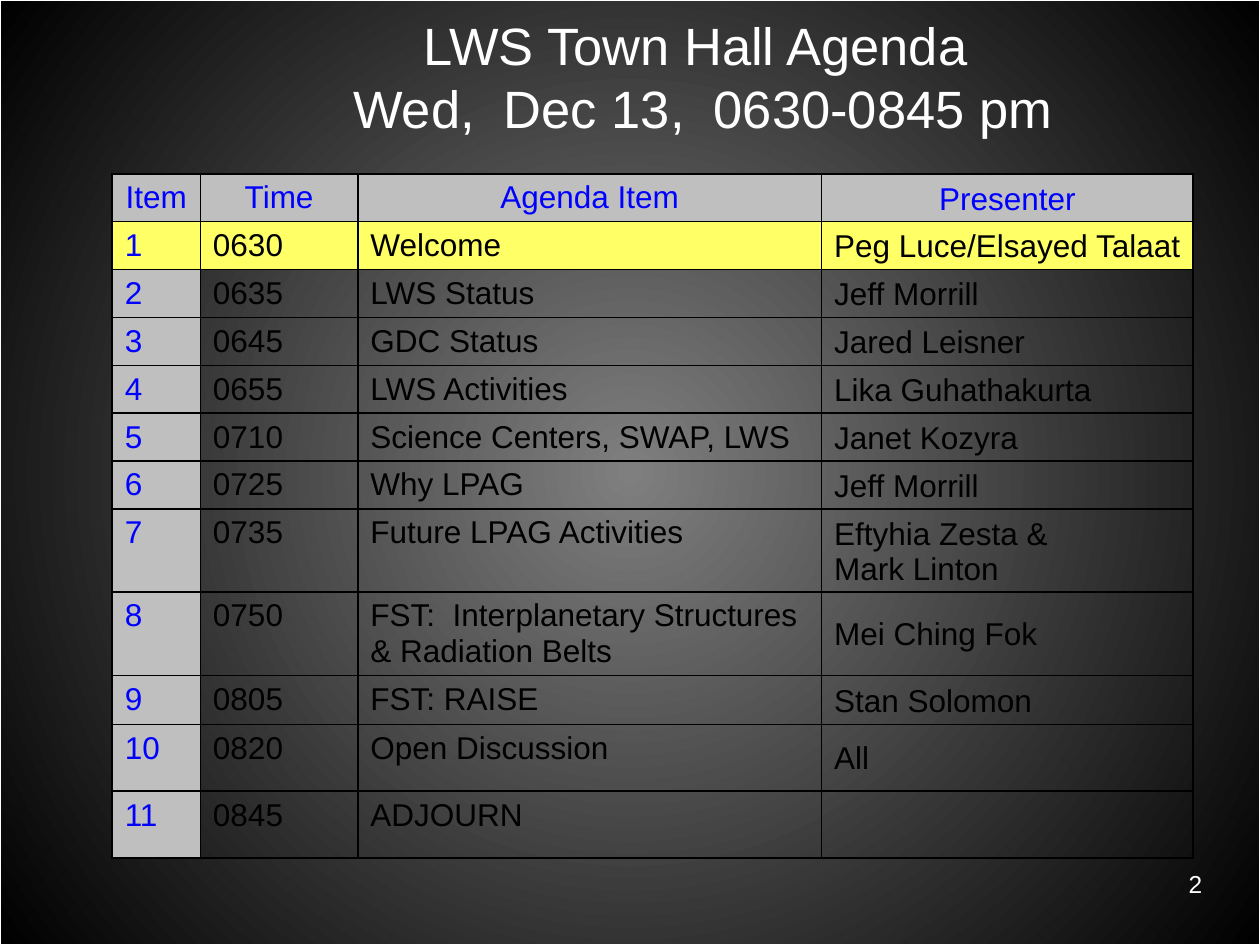
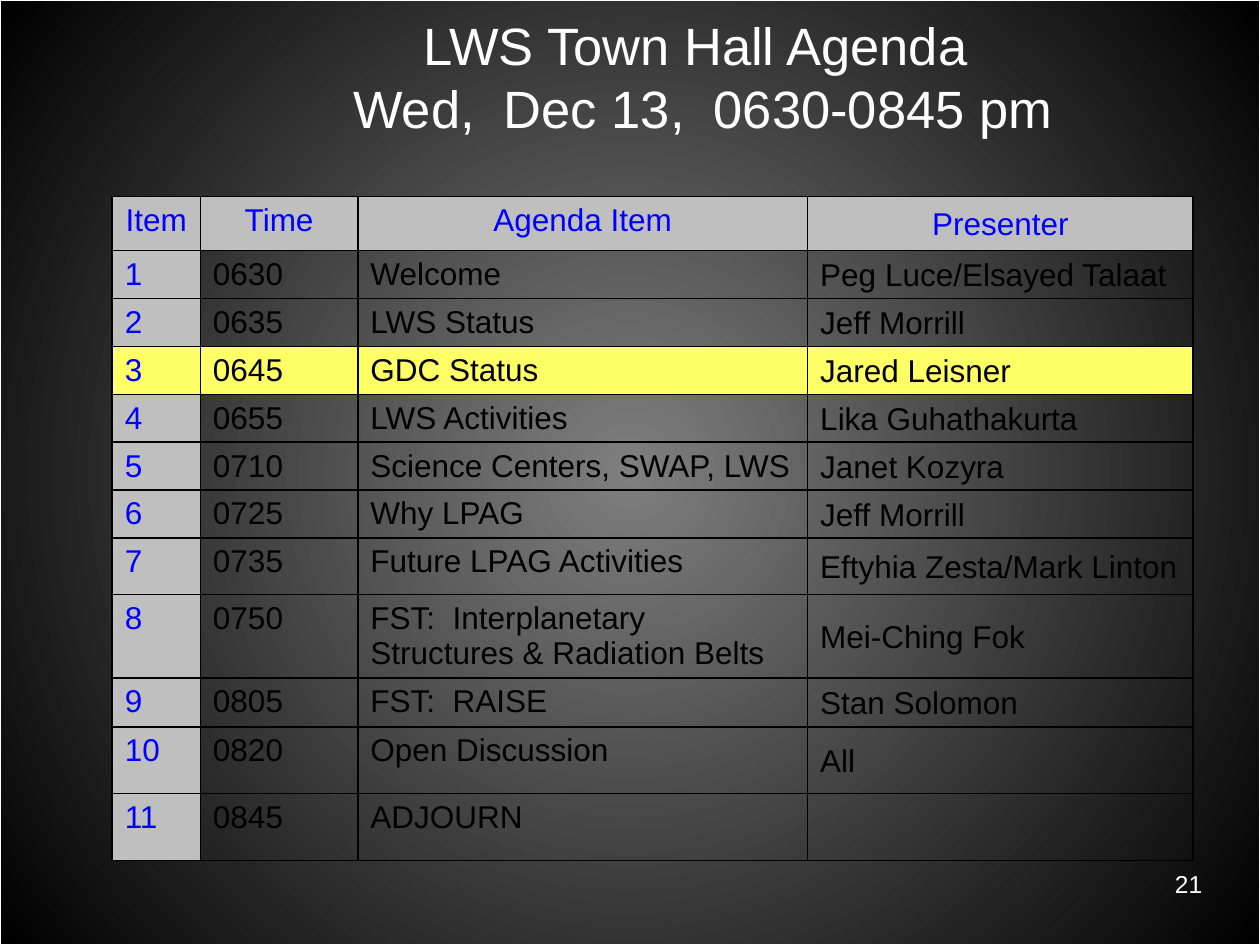
from pptx import Presentation
from pptx.dml.color import RGBColor
from pptx.enum.shapes import MSO_SHAPE
from pptx.enum.text import MSO_ANCHOR, PP_ALIGN
from pptx.oxml import parse_xml
from pptx.oxml.ns import nsdecls, qn
from pptx.util import Inches, Pt

TITLE = "LWS Town Hall Agenda \vWed,  Dec 13,  0630-0845 pm"
HEADINGS = ("Item", "Time", "Agenda Item", "Presenter")
AGENDA = (
    ("0630", "Welcome", "Peg Luce/Elsayed Talaat"),
    ("0635", "LWS Status", "Jeff Morrill"),
    ("0645", "GDC Status", "Jared Leisner"),
    ("0655", "LWS Activities", "Lika Guhathakurta"),
    ("0710", "Science Centers, SWAP, LWS", "Janet Kozyra"),
    ("0725", "Why LPAG", "Jeff Morrill"),
    ("0735", "Future LPAG Activities", "Eftyhia Zesta &\nMark Linton"),
    ("0750", "FST:  Interplanetary Structures & Radiation Belts", "Mei Ching Fok"),
    ("0805", "FST: RAISE", "Stan Solomon"),
    ("0820", "Open Discussion", "All"),
    ("0845", "ADJOURN", ""),
)
REWORDED = {
    "Eftyhia Zesta &\nMark Linton": "Eftyhia Zesta/Mark Linton",
    "Mei Ching Fok": "Mei-Ching Fok",
    "FST: RAISE": "FST:  RAISE",
}
LATE_AGENDA = [[REWORDED.get(text, text) for text in entry] for entry in AGENDA]
ROW = 0.38
LAST_ROWS = [0.66, 0.39, 0.53, 0.53]


def color(value):
    """Turn a hex string into a colour."""
    return RGBColor.from_string(value)


class AgendaDeck:
    """Hold the shared style and the current slide."""

    font = "Arial"
    white, black, blue = "FFFFFF", "000000", "0000FF"
    gray, yellow = "BFBFBF", "FFFF66"

    def __init__(self):
        """Start a deck with a radial background on its master."""
        self.deck = Presentation()
        self.deck.slide_width, self.deck.slide_height = Inches(10), Inches(7.5)
        master = self.deck.slide_master
        fill = master.background.fill
        fill.gradient()
        for stop, shade in zip(fill.gradient_stops, ("7F7F7F", self.black)):
            stop.color.rgb = color(shade)
        gradient = master.element.find(".//" + qn("a:gradFill"))
        gradient.replace(gradient.find(qn("a:lin")), parse_xml(
            f'<a:path {nsdecls("a")} path="circle">'
            '<a:fillToRect l="50000" t="50000" r="50000" b="50000"/></a:path>'))

    def new_page(self, number):
        """Add a page with its frame, number and title."""
        self.page = self.deck.slides.add_slide(self.deck.slide_layouts[6])
        self.frame()
        self.text(str(number), 7.56, 6.85, 2.08, 0.39, 14, PP_ALIGN.RIGHT)
        title = self.text(TITLE, 1.13, 0.14, 8.9, 0.93, 30, PP_ALIGN.CENTER)
        title.vertical_anchor = MSO_ANCHOR.MIDDLE

    def frame(self):
        """Outline the whole page."""
        box = self.page.shapes.add_shape(
            MSO_SHAPE.RECTANGLE, 0, 0, self.deck.slide_width, self.deck.slide_height)
        box.shadow.inherit = False
        box.fill.background()
        box.line.color.rgb = color(self.white)
        box.line.width = Pt(0.75)

    def style(self, frame, size, shade, align):
        """Format every paragraph of a text frame."""
        for paragraph in frame.paragraphs:
            paragraph.alignment = align
            paragraph.font.name = self.font
            paragraph.font.size = Pt(size)
            paragraph.font.color.rgb = color(shade)

    def text(self, words, left, top, width, height, size, align):
        """Add a white text box and return its text frame."""
        box = self.page.shapes.add_textbox(
            Inches(left), Inches(top), Inches(width), Inches(height))
        frame = box.text_frame
        frame.word_wrap = True
        frame.text = words
        self.style(frame, size, self.white, align)
        return frame

    def cell(self, cell, words, fill, shade, align):
        """Write, border and fill one table cell."""
        cell.text = words
        self.style(cell.text_frame, 18, shade, align)
        cell.margin_bottom = Inches(0.01)
        properties = cell._tc.get_or_add_tcPr()
        for side in "LRTB":
            properties.append(parse_xml(
                f'<a:ln{side} {nsdecls("a")} w="{Pt(1)}"><a:solidFill>'
                f'<a:srgbClr val="{self.black}"/></a:solidFill></a:ln{side}>'))
        if fill:
            cell.fill.solid()
            cell.fill.fore_color.rgb = color(fill)
        else:
            cell.fill.background()

    def agenda(self, entries, current, top, widths, heights):
        """Add the agenda table with the current item highlighted."""
        rows = [HEADINGS] + [(str(item), *entry) for item, entry in enumerate(entries, 1)]
        table = self.page.shapes.add_table(
            len(rows), len(HEADINGS), Inches(0.89), Inches(top),
            Inches(sum(widths)), Inches(sum(heights))).table
        table.first_row = table.horz_banding = False
        for column, width in zip(table.columns, widths):
            column.width = Inches(width)
        for row, height in zip(table.rows, heights):
            row.height = Inches(height)
        for item, row in enumerate(rows):
            for place, words in enumerate(row):
                label = item == 0 or place == 0
                fill = self.yellow if item == current else self.gray if label else None
                cell = table.cell(item, place)
                self.cell(cell, words, fill, self.blue if label else self.black,
                          PP_ALIGN.LEFT if item else PP_ALIGN.CENTER)
                if place == len(HEADINGS) - 1:
                    cell.vertical_anchor = MSO_ANCHOR.MIDDLE
                    cell.margin_top = Inches(0.03)


def main():
    """Build both agenda pages."""
    show = AgendaDeck()
    show.new_page(2)
    show.agenda(AGENDA, 1, 1.38, (0.7, 1.25, 3.68, 2.95),
                [ROW] * 7 + [0.66] + LAST_ROWS)
    show.new_page(21)
    show.agenda(LATE_AGENDA, 3, 1.56, (0.7, 1.25, 3.57, 3.06),
                [0.43] + [ROW] * 6 + [0.45] + LAST_ROWS)
    show.deck.save("out.pptx")


if __name__ == "__main__":
    main()
